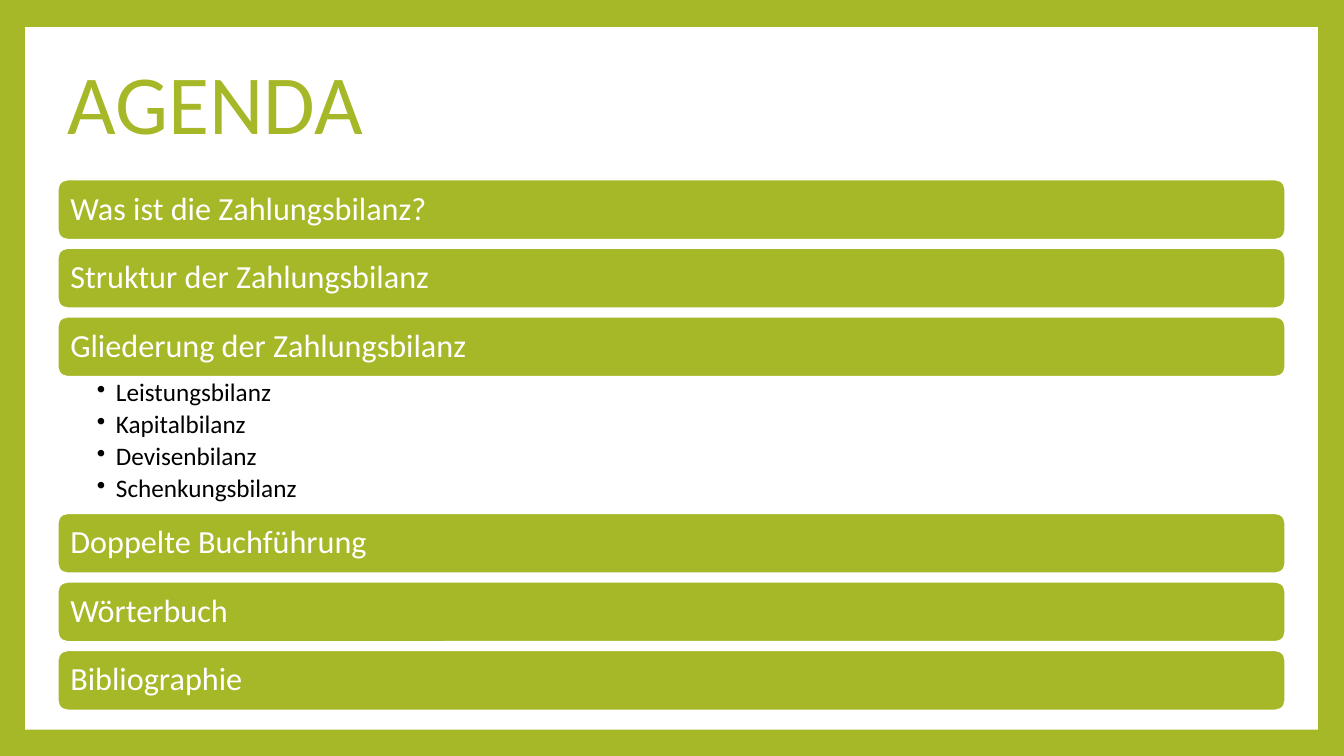
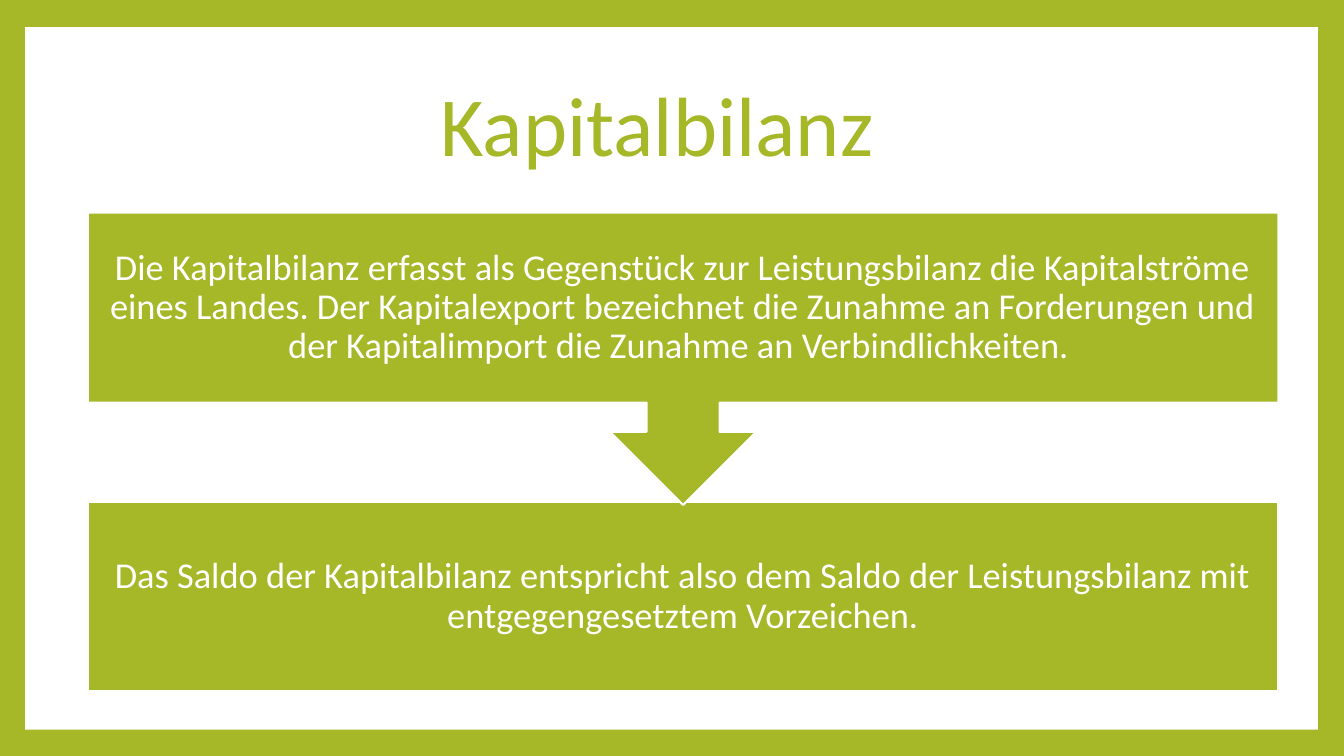
"""Builds two slides on the balance of payments: agenda and capital account."""
from lxml import etree
from pptx import Presentation
from pptx import util as u
from pptx.dml.color import RGBColor
from pptx.enum import shapes, text
from pptx.oxml import ns

COLOURS = {"green": "A6B727", "white": "FFFFFF", "black": "000000"}
FONT = "Calibri"
SHAPE = shapes.MSO_SHAPE
ALIGN = text.PP_ALIGN
ANCHOR = text.MSO_ANCHOR


def colour(name):
    return RGBColor.from_string(COLOURS[name])


class Deck:
    """Holds the shared style and the current slide."""

    def __init__(self):
        self.prs = Presentation()
        self.prs.slide_width, self.prs.slide_height = u.Inches(13.33), u.Inches(7.5)
        self.layout = self.prs.slide_layouts[5]
        backdrop = self.layout.background.fill
        backdrop.solid()
        backdrop.fore_color.rgb = colour("green")
        self.slide = None

    def add_slide(self, heading, box):
        self.slide = self.prs.slides.add_slide(self.layout)
        title = self.slide.shapes.title
        title.left, title.top, title.width, title.height = map(u.Inches, box)
        self.fill_text(title.text_frame, [heading], 60, "green")
        panel = self.shape(SHAPE.RECTANGLE, (0.25, 0.27, 12.82, 6.97), "white")
        title.element.addprevious(panel.element)

    def shape(self, kind, box, fill, line=None):
        shape = self.slide.shapes.add_shape(kind, *map(u.Inches, box))
        shape.shadow.inherit = False
        shape.fill.solid()
        shape.fill.fore_color.rgb = colour(fill)
        if line:
            shape.line.color.rgb = colour(line)
            shape.line.width = u.Pt(1.5)
        else:
            shape.line.fill.background()
        return shape

    def fill_text(self, frame, lines, size, ink, align=ALIGN.LEFT, anchor=ANCHOR.MIDDLE,
                  insets=(0.1, 0.05, 0.1, 0.05), bullets=False):
        frame.word_wrap = True
        frame.auto_size = text.MSO_AUTO_SIZE.NONE
        frame.vertical_anchor = anchor
        (frame.margin_left, frame.margin_top,
         frame.margin_right, frame.margin_bottom) = map(u.Inches, insets)
        frame.text = "\n".join(lines)
        for paragraph in frame.paragraphs:
            if bullets:
                self.bullet(paragraph)
            paragraph.alignment = align
            paragraph.line_spacing = 0.9
            font = paragraph.font
            font.name, font.size = FONT, u.Pt(size)
            font.color.rgb = colour(ink)

    def bullet(self, paragraph):
        paragraph.space_after = u.Pt(3.4)
        properties = paragraph._p.get_or_add_pPr()
        properties.set("marL", str(u.Inches(0.19)))
        properties.set("indent", str(-u.Inches(0.19)))
        etree.SubElement(properties, ns.qn("a:buChar")).set("char", "•")

    def label(self, kind, box, wording, size, inset, align):
        shape = self.shape(kind, box, "green", "white")
        self.fill_text(shape.text_frame, [wording], size, "white", align,
                       insets=(inset,) * 4)

    def bullet_list(self, box, items):
        frame = self.slide.shapes.add_textbox(*map(u.Inches, box)).text_frame
        self.fill_text(frame, items, 18, "black", anchor=ANCHOR.TOP,
                       insets=(0.39, 0.03, 0.18, 0.03), bullets=True)


def agenda(deck):
    deck.add_slide("AGENDA", (0.57, 0.27, 11.85, 1.59))
    left, width, bar_height, gap, list_height = 0.57, 12.18, 0.6, 0.08, 1.35
    topics = [
        ("Was ist die Zahlungsbilanz?", []),
        ("Struktur der Zahlungsbilanz", []),
        ("Gliederung der Zahlungsbilanz",
         ["Leistungsbilanz", "Kapitalbilanz", "Devisenbilanz", "Schenkungsbilanz"]),
        ("Doppelte Buchführung", []),
        ("Wörterbuch", []),
        ("Bibliographie", []),
    ]
    top = 1.78
    for topic, subtopics in topics:
        deck.label(SHAPE.ROUNDED_RECTANGLE, (left, top, width, bar_height),
                   topic, 23, 0.1, ALIGN.LEFT)
        top += bar_height
        if subtopics:
            deck.bullet_list((left, top, width, list_height), subtopics)
            top += list_height
        else:
            top += gap


def capital_account(deck):
    deck.add_slide("Kapitalbilanz", (4.27, 0.46, 4.79, 1.64))
    left, width = 0.87, 11.81
    steps = [
        (SHAPE.RECTANGLE, 4.98, 1.88,
         "Das Saldo der Kapitalbilanz entspricht also dem Saldo der Leistungsbilanz "
         "mit entgegengesetztem Vorzeichen."),
        (SHAPE.DOWN_ARROW_CALLOUT, 2.11, 2.9,
         "Die Kapitalbilanz erfasst als Gegenstück zur Leistungsbilanz die "
         "Kapitalströme eines Landes. Der Kapitalexport bezeichnet die Zunahme an "
         "Forderungen und der Kapitalimport die Zunahme an Verbindlichkeiten. "),
    ]
    for kind, top, height, wording in steps:
        deck.label(kind, (left, top, width, height), wording, 26, 0.2, ALIGN.CENTER)


def main():
    deck = Deck()
    agenda(deck)
    capital_account(deck)
    deck.prs.save("out.pptx")


if __name__ == "__main__":
    main()
